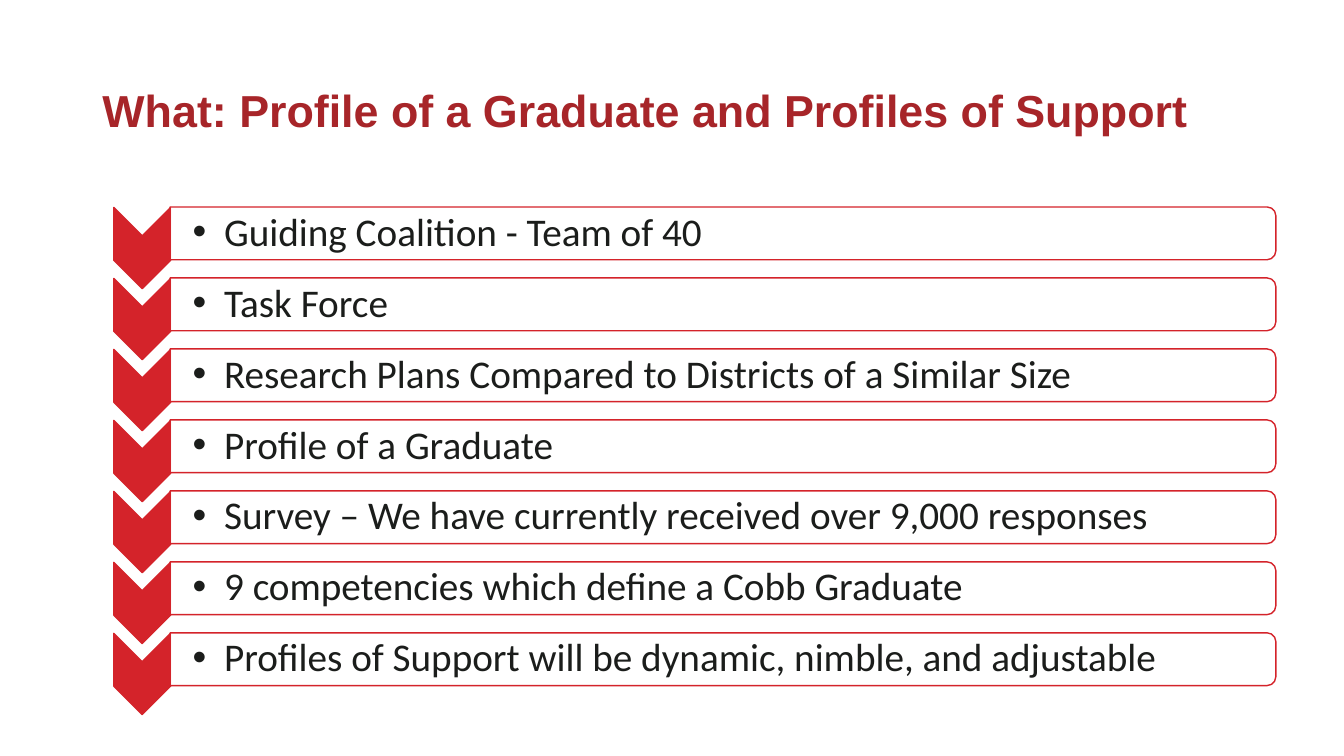
from dataclasses import dataclass

from lxml import etree
from pptx import Presentation
from pptx.dml.color import RGBColor
from pptx.enum import shapes, text
from pptx.oxml import ns
from pptx.util import Pt


@dataclass(frozen=True)
class Theme:
    title: str = "A72529"
    red: str = "D4232A"
    white: str = "FFFFFF"
    ink: str = "1B1D1B"
    head: str = "Arial"
    body: str = "Calibri"
    big: int = 32
    mid: int = 28


class Deck:
    def __init__(self, theme):
        self.theme = theme
        self.prs = Presentation()
        self.prs.slide_width, self.prs.slide_height = Pt(960), Pt(540)
        self.slide = self.prs.slides.add_slide(self.prs.slide_layouts[5])

    def label(self, para, words, font, size, color, bold=False):
        para.line_spacing = 0.9
        para.alignment = text.PP_ALIGN.LEFT
        run = para.add_run()
        run.text = words
        run.font.name, run.font.size, run.font.bold = font, Pt(size), bold
        run.font.color.rgb = RGBColor.from_string(color)

    def title(self, words, x, y, w, h):
        t, box = self.theme, self.slide.shapes.title
        box.left, box.top, box.width, box.height = map(Pt, (x, y, w, h))
        frame = box.text_frame
        frame.vertical_anchor = text.MSO_ANCHOR.MIDDLE
        self.label(frame.paragraphs[0], words, t.head, t.big, t.title, True)

    def turned(self, kind, cx, cy, w, h, fill, alpha=100):
        """Add a shape centred on cx, cy, turned a quarter; w and h apply before the turn."""
        box = self.slide.shapes.add_shape(
            kind, Pt(cx - w / 2), Pt(cy - h / 2), Pt(w), Pt(h))
        box.rotation = 90
        box.shadow.inherit = False
        box.fill.solid()
        box.fill.fore_color.rgb = RGBColor.from_string(fill)
        box.line.color.rgb = RGBColor.from_string(self.theme.red)
        box.line.width = Pt(1)
        if alpha < 100:
            color = box.element.spPr.find(
                ns.qn("a:solidFill") + "/" + ns.qn("a:srgbClr"))
            etree.SubElement(color, ns.qn("a:alpha"), val=str(alpha * 1000))

    def bullet(self, words, x, cy, w, h):
        t = self.theme
        box = self.slide.shapes.add_textbox(Pt(x), Pt(cy - h / 2), Pt(w), Pt(h))
        frame = box.text_frame
        frame.word_wrap = True
        frame.vertical_anchor = text.MSO_ANCHOR.MIDDLE
        frame.margin_left = Pt(15.7)
        frame.margin_top = frame.margin_right = frame.margin_bottom = Pt(1.4)
        para = frame.paragraphs[0]
        para.level = 1
        props = para._p.get_or_add_pPr()
        props.set("marL", str(Pt(22.5)))
        props.set("indent", str(-Pt(22.5)))
        etree.SubElement(props, ns.qn("a:buFont"), typeface=t.head)
        etree.SubElement(props, ns.qn("a:buChar"), char="•")
        self.label(para, words, t.body, t.mid, t.ink)


STEPS = [
    "Guiding Coalition - Team of 40",
    "Task Force",
    "Research Plans Compared to Districts of a Similar Size",
    "Profile of a Graduate",
    "Survey – We have currently received over 9,000 responses",
    "9 competencies which define a Cobb Graduate",
    "Profiles of Support will be dynamic, nimble, and adjustable",
]
FIRST, PITCH = 166.7, 50.7


def main():
    theme = Theme()
    deck = Deck(theme)
    deck.title("What: Profile of a Graduate and Profiles of Support",
               66, 28.8, 828, 104.4)
    kind = shapes.MSO_SHAPE
    for i, step in enumerate(STEPS):
        mid = FIRST + i * PITCH
        deck.turned(kind.CHEVRON, 101.6, mid + 10.5, 58, 40.6, theme.red)
        deck.turned(kind.ROUND_2_SAME_RECTANGLE, 516.4, mid, 37.7, 789.8,
                    theme.white, 90)
        deck.bullet(step, 121.9, mid, 787.7, 34)
    deck.prs.save("out.pptx")


if __name__ == "__main__":
    main()
